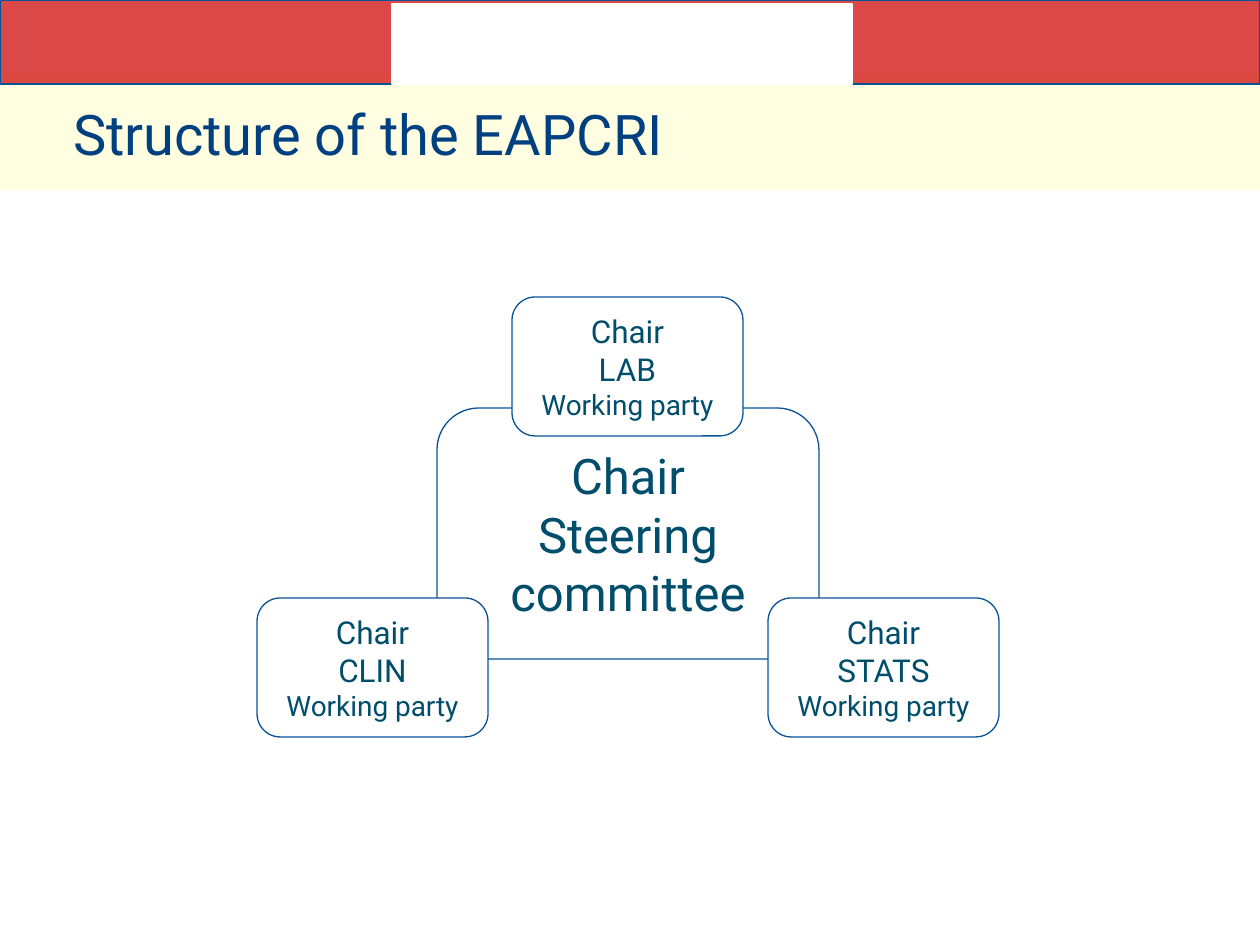
from lxml import etree
from pptx import Presentation
from pptx import util as u
from pptx.dml.color import RGBColor
from pptx.enum import shapes, text
from pptx.oxml.ns import qn

EMU_PER_PX = 914400 / 126
SLIDE_WIDTH, SLIDE_HEIGHT = 1260, 945
FONT = "Roboto"

WHITE = RGBColor(0xFF, 0xFF, 0xFF)
CREAM = RGBColor(0xFF, 0xFE, 0xE0)
RED = RGBColor(0xCE, 0x02, 0x02)
LINE_BLUE = RGBColor(0x09, 0x52, 0x95)
TITLE_BLUE = RGBColor(0x00, 0x40, 0x80)
TEXT_TEAL = RGBColor(0x00, 0x4E, 0x6C)

PARTY_WIDTH, PARTY_HEIGHT = 231, 139


def px(length):
    return u.Emu(round(length * EMU_PER_PX))


def add_box(slide, kind, left, top, width, height, fill, line=None):
    shape = slide.shapes.add_shape(kind, px(left), px(top), px(width), px(height))
    shape.shadow.inherit = False
    shape.fill.solid()
    shape.fill.fore_color.rgb = fill
    if line is None:
        shape.line.fill.background()
    else:
        shape.line.color.rgb = line
        shape.line.width = u.Pt(0.75)
    return shape


def set_opacity(shape, percent):
    color = shape.fill._xPr.find(qn("a:solidFill"))[0]
    etree.SubElement(color, qn("a:alpha"), val=str(percent * 1000))


def style(paragraph, size, color):
    for run in paragraph.runs:
        run.font.name = FONT
        run.font.size = u.Pt(size)
        run.font.color.rgb = color


def add_header(slide, left, top, width):
    rectangle = shapes.MSO_SHAPE.RECTANGLE
    add_box(slide, rectangle, left, top + 74, width, 116, CREAM)
    banner = add_box(slide, rectangle, left, top, width, 84, RED, LINE_BLUE)
    set_opacity(banner, 72)
    add_box(slide, rectangle, left + 392, top + 4, 460, 80, WHITE, WHITE)


def add_title(slide, left, top, width, height, title):
    text_frame = slide.shapes.add_textbox(
        px(left), px(top), px(width), px(height)).text_frame
    text_frame.word_wrap = True
    text_frame.margin_left = text_frame.margin_right = text_frame.margin_bottom = 0
    text_frame.margin_top = px(6)
    text_frame.text = title
    style(text_frame.paragraphs[0], 32, TITLE_BLUE)


def add_group_box(slide, left, top, width, height, lines):
    """Add a rounded box holding (wording, size) lines."""
    shape = add_box(slide, shapes.MSO_SHAPE.ROUNDED_RECTANGLE,
                    left, top, width, height, WHITE, LINE_BLUE)
    text_frame = shape.text_frame
    text_frame.word_wrap = True
    text_frame.vertical_anchor = text.MSO_ANCHOR.MIDDLE
    text_frame.text = "\n".join(wording for wording, size in lines)
    for paragraph, (wording, size) in zip(text_frame.paragraphs, lines):
        paragraph.alignment = text.PP_ALIGN.CENTER
        style(paragraph, size, TEXT_TEAL)


def add_structure(slide, left, top, width):
    """Place the steering committee with a working party above and at each side."""
    committee_width = 382
    add_group_box(slide, left + (width - committee_width) // 2, top + 111,
                  committee_width, 251,
                  [("Chair", 28), ("Steering committee", 28)])
    side = width - PARTY_WIDTH
    for name, x, y in (("LAB", side // 2, 0), ("CLIN", 0, 301), ("STATS", side, 301)):
        add_group_box(slide, left + x, top + y, PARTY_WIDTH, PARTY_HEIGHT,
                      [("Chair", 18), (name, 18), ("Working party", 16)])


def main():
    presentation = Presentation()
    presentation.slide_width = px(SLIDE_WIDTH)
    presentation.slide_height = px(SLIDE_HEIGHT)
    slide = presentation.slides.add_slide(presentation.slide_layouts[6])
    add_header(slide, 0, 0, SLIDE_WIDTH)
    add_title(slide, 73, 94, 1113, 74, "Structure of the EAPCRI")
    add_structure(slide, 257, 297, 742)
    presentation.save("out.pptx")


if __name__ == "__main__":
    main()
